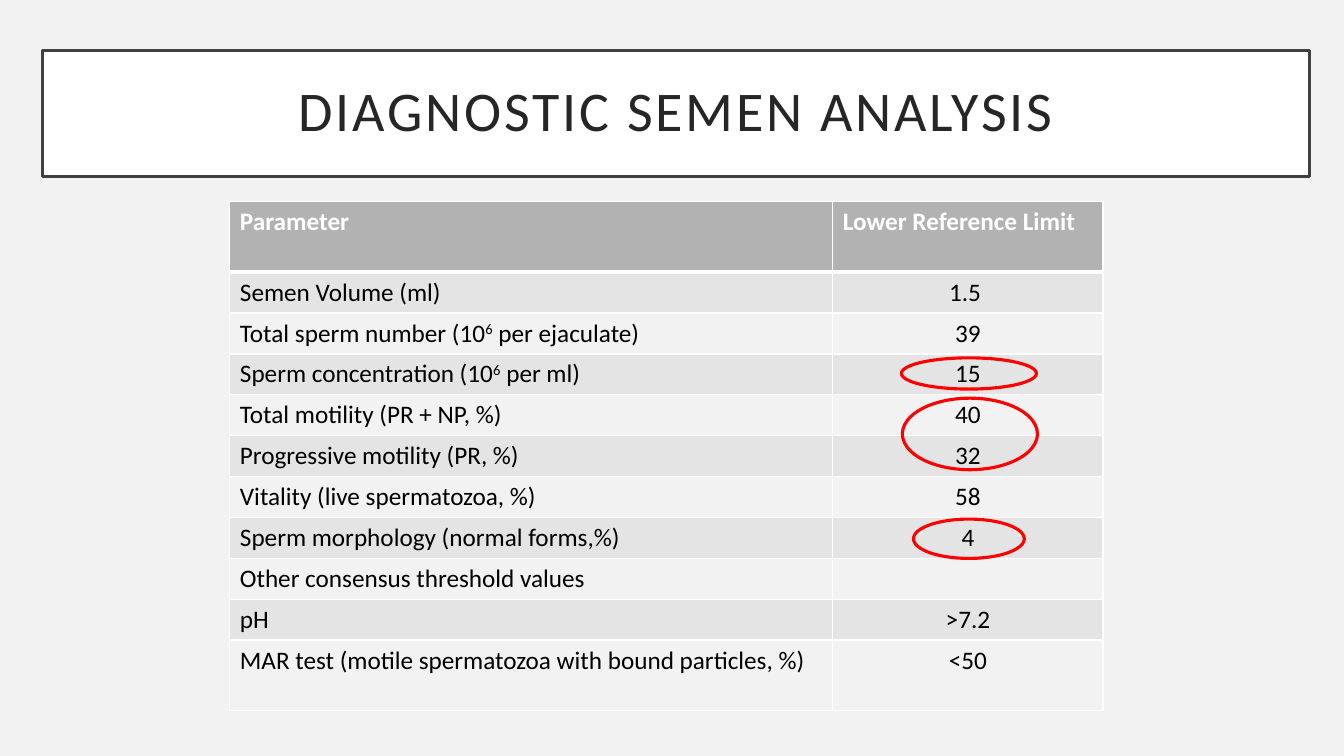
from dataclasses import dataclass

from lxml import etree
from pptx import Presentation
from pptx import util as u
from pptx.dml.color import RGBColor
from pptx.enum import shapes, text
from pptx.oxml import ns


@dataclass(frozen=True)
class Theme:
    font: str = "Calibri"
    background: str = "F2F2F2"
    white: str = "FFFFFF"
    frame: str = "404040"
    title: str = "262626"
    header: str = "B2B2B2"
    bands: tuple = ("E4E4E4", "F2F2F2")
    body: str = "000000"
    highlight: str = "FF0000"
    title_size: int = 40
    table_size: int = 18


THEME = Theme()
HEADINGS = ("Parameter", "Lower Reference Limit")
LIMITS = [
    ("Semen Volume (ml)", "1.5 "),
    ("Total sperm number (10^6^ per ejaculate)", "39"),
    ("Sperm concentration (10^6^ per ml)", "15"),
    ("Total motility (PR + NP, %)", "40"),
    ("Progressive motility (PR, %)", "32"),
    ("Vitality (live spermatozoa, %)", "58"),
    ("Sperm morphology (normal forms,%)", "4"),
    ("Other consensus threshold values", ""),
    ("pH", ">7.2"),
    ("MAR test (motile spermatozoa with bound particles, %)", "<50"),
]
HIGHLIGHTS = [
    (6.66, 1.55, 1.34, 0.31),
    (6.67, 1.95, 1.34, 0.71),
    (6.78, 3.15, 1.1, 0.39),
]


def rgb(value):
    return RGBColor.from_string(value)


def add_run(paragraph, wording, size, color, bold=False):
    run = paragraph.add_run()
    run.text = wording
    formats = {"name": THEME.font, "size": u.Pt(size), "bold": bold}
    for name, value in formats.items():
        setattr(run.font, name, value)
    run.font.color.rgb = rgb(color)
    return run


def set_outline(shape, color, width):
    shape.line.color.rgb = rgb(color)
    shape.line.width = u.Pt(width)


def set_borders(cell, top, bottom):
    properties = cell._tc.get_or_add_tcPr()
    for side, width in {"L": 1, "R": 1, "T": top, "B": bottom}.items():
        line = etree.SubElement(properties, ns.qn(f"a:ln{side}"), w=str(u.Pt(width)))
        fill = etree.SubElement(line, ns.qn("a:solidFill"))
        etree.SubElement(fill, ns.qn("a:srgbClr"), val=THEME.white)


def fill_title(slide, left, top, width, height):
    title = slide.shapes.title
    box = {"left": left, "top": top, "width": width, "height": height}
    for name, value in box.items():
        setattr(title, name, u.Inches(value))
    title.fill.solid()
    title.fill.fore_color.rgb = rgb(THEME.white)
    set_outline(title, THEME.frame, 2.5)
    frame = title.text_frame
    formats = {
        "word_wrap": True,
        "auto_size": text.MSO_AUTO_SIZE.NONE,
        "vertical_anchor": text.MSO_ANCHOR.MIDDLE,
    }
    margins = {f"margin_{side}": u.Inches(0.2) for side in ("left", "top", "right", "bottom")}
    for name, value in {**formats, **margins}.items():
        setattr(frame, name, value)
    paragraph = frame.paragraphs[0]
    paragraph.alignment = text.PP_ALIGN.CENTER
    paragraph.line_spacing = 0.9
    run = add_run(paragraph, "DIAGNOSTIC SEMEN ANALYSIS", THEME.title_size, THEME.title)
    run._r.get_or_add_rPr().set("spc", "200")


def fill_cell(cell, wording, row, column):
    is_header = row == 0
    set_borders(cell, 3 if row == 1 else 1, 3 if is_header else 1)
    cell.fill.solid()
    cell.fill.fore_color.rgb = rgb(THEME.header if is_header else THEME.bands[(row - 1) % 2])
    paragraph = cell.text_frame.paragraphs[0]
    if column == 1 and not is_header:
        paragraph.alignment = text.PP_ALIGN.CENTER
    color = THEME.white if is_header else THEME.body
    for index, part in enumerate(wording.split("^")):
        if part:
            run = add_run(paragraph, part, THEME.table_size, color, is_header)
            if index % 2:
                run._r.get_or_add_rPr().set("baseline", "30000")


def add_limits_table(slide, left, top, width, height):
    rows = [HEADINGS, *LIMITS]
    box = [u.Inches(value) for value in (left, top, width, height)]
    table = slide.shapes.add_table(len(rows), len(HEADINGS), *box).table
    table.first_row = table.horz_banding = False
    limit_width = 2.68
    for column, column_width in zip(table.columns, (width - limit_width, limit_width)):
        column.width = u.Inches(column_width)
    end_height = 0.7
    middle_height = (height - 2 * end_height) / (len(rows) - 2)
    for row, values in enumerate(rows):
        is_end = row in (0, len(rows) - 1)
        table.rows[row].height = u.Inches(end_height if is_end else middle_height)
        for column, wording in enumerate(values):
            fill_cell(table.cell(row, column), wording, row, column)


def add_highlights(slide, left, top):
    for x, y, width, height in HIGHLIGHTS:
        box = [u.Inches(value) for value in (left + x, top + y, width, height)]
        ellipse = slide.shapes.add_shape(shapes.MSO_SHAPE.OVAL, *box)
        ellipse.shadow.inherit = False
        ellipse.fill.background()
        set_outline(ellipse, THEME.highlight, 2.25)


def main():
    presentation = Presentation()
    presentation.slide_width = u.Inches(13.33)
    presentation.slide_height = u.Inches(7.5)
    slide = presentation.slides.add_slide(presentation.slide_layouts.get_by_name("Title Only"))
    slide.background.fill.solid()
    slide.background.fill.fore_color.rgb = rgb(THEME.background)
    fill_title(slide, 0.42, 0.5, 12.57, 1.25)
    table_left, table_top = 2.28, 2
    add_limits_table(slide, table_left, table_top, 8.66, 5.05)
    add_highlights(slide, table_left, table_top)
    presentation.save("out.pptx")


if __name__ == "__main__":
    main()
